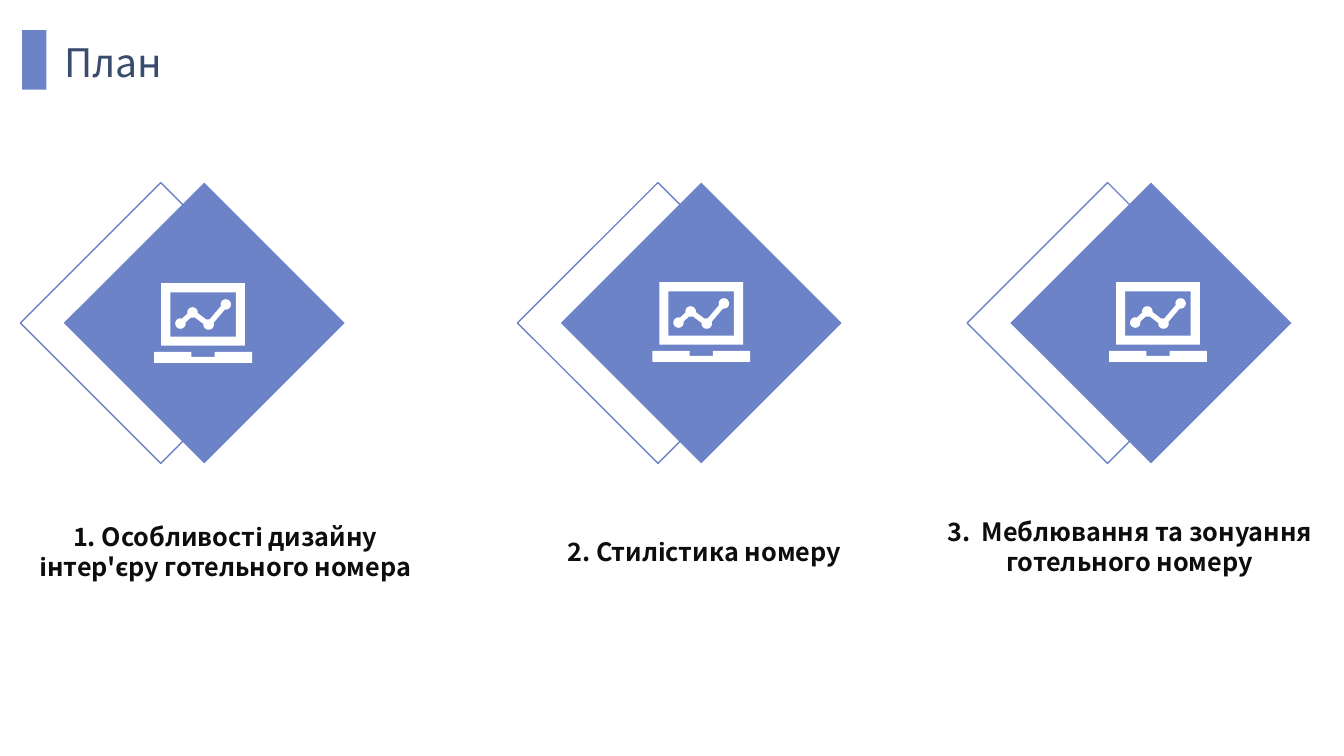
import math

from pptx import Presentation
from pptx.dml.color import RGBColor
from pptx.enum.shapes import MSO_SHAPE
from pptx.enum.text import MSO_AUTO_SIZE, PP_ALIGN
from pptx.util import Pt

RECTANGLE = MSO_SHAPE.RECTANGLE
CENTER = PP_ALIGN.CENTER
LEFT = PP_ALIGN.LEFT
GROW = MSO_AUTO_SIZE.SHAPE_TO_FIT_TEXT

PX = 9144
FONT = "Noto Sans CJK SC"
COLORS = {"accent": "6D83C8", "title": "394B6E", "body": "0D0D0D", "white": "FFFFFF"}

DIAMOND_SIDE = 197
DIAMOND_SHIFT = 43
DOT_RADIUS = 5.2
DOT_GAP = math.radians(30)
ARC_STEPS = 12
TREND_DOTS = [(26, 40), (38, 29), (54, 41), (71, 21)]
LAPTOP_BASE = [(0, 68), (37, 68), (37, 73), (60, 73), (60, 68), (97, 68), (97, 79), (0, 79)]
LAPTOP_SCREEN = [(16, 9), (16, 53), (81, 53), (81, 9)]
LAPTOP_LID = [(7, 0), (90, 0), (90, 62), (7, 62)]

ITEMS = [
    {"diamond": (61, 222), "icon": (153, 281), "label": (10, 512, 427, 71), "indent": 0,
     "text": "1. Особливості дизайну інтер'єру готельного номера"},
    {"diamond": (554, 222), "icon": (647, 280), "label": (460, 527, 427, 40), "indent": 50,
     "text": "2. Стилістика номеру"},
    {"diamond": (1000, 222), "icon": (1100, 280), "label": (907, 507, 427, 71), "indent": 0,
     "text": "3.  Меблювання та зонуання готельного номеру"},
]


def color(name):
    return RGBColor.from_string(COLORS[name])


def paint(shape, fill=None, line=None):
    shape.shadow.inherit = False
    if fill:
        shape.fill.solid()
        shape.fill.fore_color.rgb = color(fill)
    else:
        shape.fill.background()
    if line:
        shape.line.color.rgb = color(line)
        shape.line.width = Pt(1)
    else:
        shape.line.fill.background()


def add_rectangle(shapes, box, fill=None, line=None, rotation=0):
    shape = shapes.add_shape(RECTANGLE, *(value * PX for value in box))
    shape.rotation = rotation
    paint(shape, fill, line)


def add_text(shapes, box, text, size, ink, bold=False, align=LEFT, indent=0):
    text_box = shapes.add_textbox(*(value * PX for value in box))
    frame = text_box.text_frame
    frame.word_wrap = True
    frame.auto_size = GROW
    para = frame.paragraphs[0]
    para.alignment = align
    if indent:
        para.level = 1
        properties = para._p.get_or_add_pPr()
        properties.set("marL", str(indent * PX))
        properties.set("indent", "0")
    span = para.add_run()
    span.text = text
    span.font.name = FONT
    span.font.size = Pt(size)
    span.font.bold = bold
    span.font.color.rgb = color(ink)


def angle_between(start, end):
    return math.atan2(end[1] - start[1], end[0] - start[0])


def trend_outline():
    route = TREND_DOTS + TREND_DOTS[-2:0:-1]
    points = []
    for index, dot in enumerate(route):
        following = route[(index + 1) % len(route)]
        start = angle_between(dot, route[index - 1]) + DOT_GAP
        finish = angle_between(dot, following) - DOT_GAP
        sweep = (finish - start) % math.tau
        for step in range(ARC_STEPS + 1):
            angle = start + sweep * step / ARC_STEPS
            points.append((dot[0] + DOT_RADIUS * math.cos(angle),
                           dot[1] + DOT_RADIUS * math.sin(angle)))
    return points


def add_laptop(shapes, left, top):
    contours = [
        [((left + x) * PX, (top + y) * PX) for x, y in contour]
        for contour in (LAPTOP_BASE, trend_outline(), LAPTOP_SCREEN, LAPTOP_LID)
    ]
    builder = shapes.build_freeform(*contours[0][0], scale=1.0)
    builder.add_line_segments(contours[0][1:], close=True)
    for contour in contours[1:]:
        builder.move_to(*contour[0])
        builder.add_line_segments(contour[1:], close=True)
    paint(builder.convert_to_shape(), fill="white")


def add_plan_item(page, item):
    shapes = page.shapes.add_group_shape().shapes
    left, top = item["diamond"]
    add_rectangle(shapes, (left, top, DIAMOND_SIDE, DIAMOND_SIDE), line="accent", rotation=45)
    add_rectangle(shapes, (left + DIAMOND_SHIFT, top, DIAMOND_SIDE, DIAMOND_SIDE),
                  fill="accent", rotation=45)
    add_laptop(shapes, *item["icon"])
    add_text(page.shapes, item["label"], item["text"], 18, "body", bold=True,
             align=CENTER, indent=item["indent"])


def add_heading(page, left, top):
    shapes = page.shapes.add_group_shape().shapes
    add_rectangle(shapes, (left, top, 24, 59), fill="accent")
    add_text(shapes, (left + 32, top + 3, 339, 57), "План", 28, "title")


def main():
    deck = Presentation()
    deck.slide_width = 1333 * PX
    deck.slide_height = 750 * PX
    page = deck.slides.add_slide(deck.slide_layouts[6])
    for item in ITEMS:
        add_plan_item(page, item)
    add_heading(page, 22, 30)
    deck.save("out.pptx")


if __name__ == "__main__":
    main()
